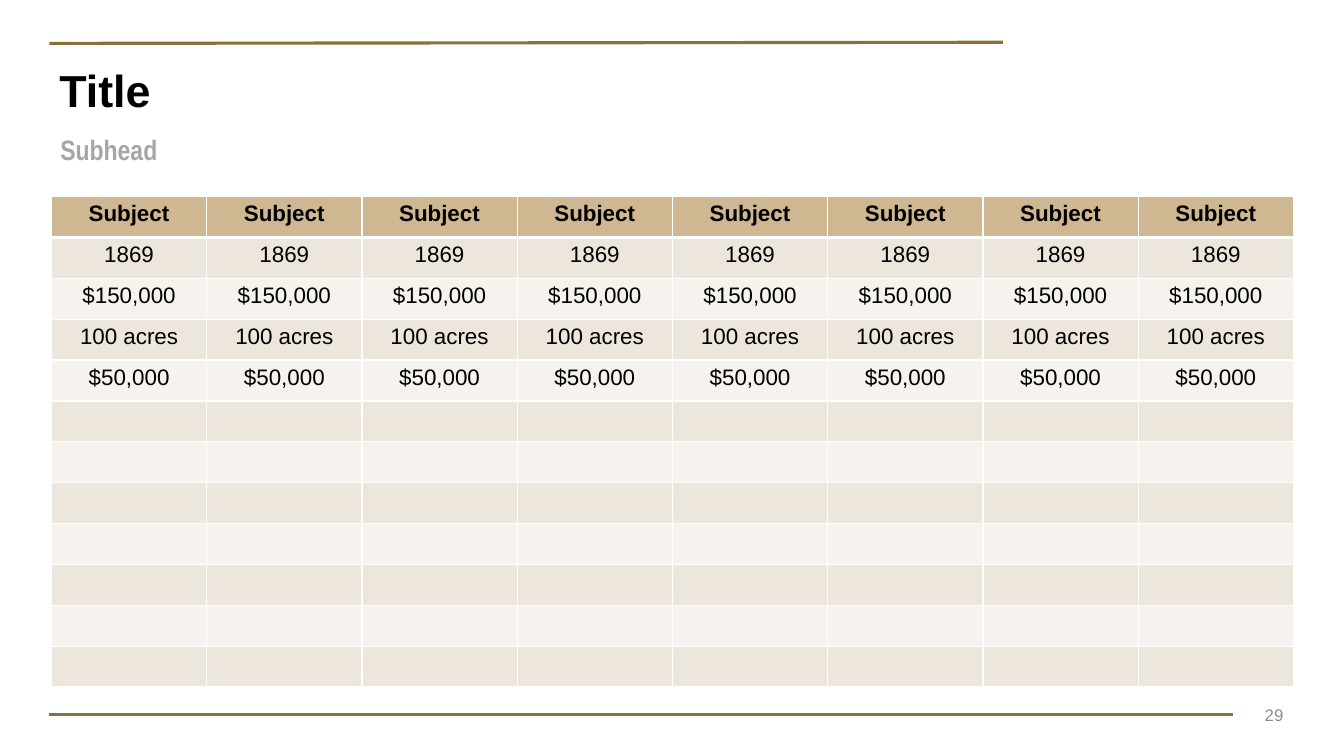
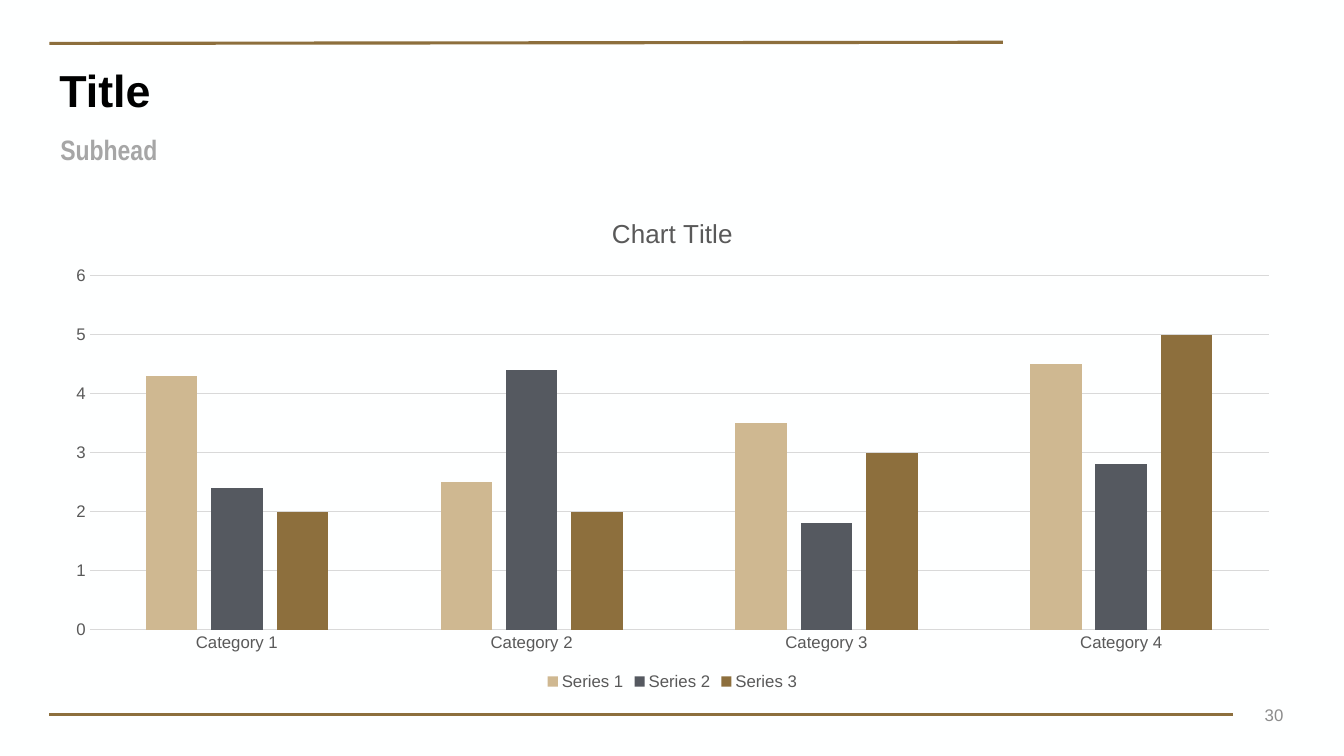
from lxml.etree import SubElement
from pptx import Presentation
from pptx.chart.data import CategoryChartData
from pptx.dml.color import RGBColor
from pptx.enum.chart import XL_CHART_TYPE, XL_LEGEND_POSITION, XL_TICK_MARK
from pptx.enum.shapes import MSO_CONNECTOR
from pptx.enum.text import MSO_ANCHOR, PP_ALIGN
from pptx.oxml.ns import qn
from pptx.util import Pt

PAPER = RGBColor(0xFE, 0xFF, 0xFF)
BLACK = RGBColor(0x00, 0x00, 0x00)
BRONZE = RGBColor(0x8D, 0x6F, 0x3D)
GOLD = RGBColor(0xCF, 0xB8, 0x91)
SLATE = RGBColor(0x55, 0x59, 0x60)
SAND = RGBColor(0xED, 0xE6, 0xDC)
CREAM = RGBColor(0xF6, 0xF3, 0xEE)
SUBHEAD_GRAY = RGBColor(0xA6, 0xA6, 0xA6)
NUMBER_GRAY = RGBColor(0x8C, 0x8C, 0x8C)
CHART_GRAY = RGBColor(0x59, 0x59, 0x59)
GRID_GRAY = RGBColor(0xD9, 0xD9, 0xD9)

BODY_FONT = "Arial"
SUBHEAD_FONT = "Arial Narrow"
CONTENT_LEFT, CONTENT_TOP, CONTENT_WIDTH = 36.75, 140.4, 887.2


def style_font(font, size, color, name=BODY_FONT, bold=False):
    font.size = Pt(size)
    font.name = name
    font.bold = bold
    font.color.rgb = color


def write_text(frame, text, size, color=BLACK, name=BODY_FONT, bold=False,
               align=PP_ALIGN.LEFT, spacing=1.0):
    para = frame.paragraphs[0]
    para.alignment = align
    para.line_spacing = spacing
    span = para.add_run()
    span.text = text
    style_font(span.font, size, color, name, bold)


class Deck:
    def __init__(self):
        self.deck = Presentation()
        self.deck.slide_width = Pt(960)
        self.deck.slide_height = Pt(540)
        self.page = None

    def start_page(self, title, subhead, number):
        self.page = self.deck.slides.add_slide(self.deck.slide_layouts[6])
        fill = self.page.background.fill
        fill.solid()
        fill.fore_color.rgb = PAPER
        self.rule(716.4, 30.2, 35.3, 31)
        self.rule(880.6, 510.4, 35.3, 510.4)
        self.text(35.3, 43.9, 614.2, 45.4, title, anchor=MSO_ANCHOR.MIDDLE,
                  size=32, bold=True, spacing=0.9)
        self.text(36, 93.6, 887.8, 28.8, subhead, size=20, bold=True,
                  color=SUBHEAD_GRAY, name=SUBHEAD_FONT, spacing=0.9)
        self.text(837.4, 496.1, 86.4, 28.8, str(number),
                  anchor=MSO_ANCHOR.MIDDLE, size=12, color=NUMBER_GRAY,
                  align=PP_ALIGN.RIGHT)

    def rule(self, x1, y1, x2, y2):
        line = self.page.shapes.add_connector(
            MSO_CONNECTOR.STRAIGHT, Pt(x1), Pt(y1), Pt(x2), Pt(y2))
        line.line.color.rgb = BRONZE
        line.line.width = Pt(2.25)
        SubElement(line.element.spPr, qn("a:effectLst"))

    def text(self, left, top, width, height, text,
             anchor=MSO_ANCHOR.TOP, **style):
        box = self.page.shapes.add_textbox(
            Pt(left), Pt(top), Pt(width), Pt(height))
        box.text_frame.word_wrap = True
        box.text_frame.vertical_anchor = anchor
        write_text(box.text_frame, text, **style)

    def cell_border(self, cell, side, width):
        properties = cell._tc.get_or_add_tcPr()
        line = SubElement(properties, qn(f"a:ln{side}"), w=str(Pt(width)))
        solid = SubElement(line, qn("a:solidFill"))
        SubElement(solid, qn("a:srgbClr"), val=str(PAPER))

    def table(self, row_texts, row_count, column_count, row_height):
        table = self.page.shapes.add_table(
            row_count, column_count, Pt(CONTENT_LEFT), Pt(CONTENT_TOP),
            Pt(CONTENT_WIDTH), Pt(row_height * row_count)).table
        table.horz_banding = False
        for index, row in enumerate(table.rows):
            header = index == 0
            row_fill = GOLD if header else SAND if index % 2 else CREAM
            widths = {"L": 1, "R": 1, "T": 3 if index == 1 else 1,
                      "B": 3 if header else 1}
            for cell in row.cells:
                cell.margin_bottom = Pt(2)
                for side, width in widths.items():
                    self.cell_border(cell, side, width)
                cell.fill.solid()
                cell.fill.fore_color.rgb = row_fill
                if index < len(row_texts):
                    write_text(cell.text_frame, row_texts[index], 16,
                               bold=header, align=PP_ALIGN.CENTER)

    def column_chart(self, title, categories, series):
        data = CategoryChartData()
        data.categories = categories
        for name, values, _ in series:
            data.add_series(name, values)
        chart = self.page.shapes.add_chart(
            XL_CHART_TYPE.COLUMN_CLUSTERED, Pt(CONTENT_LEFT), Pt(CONTENT_TOP),
            Pt(CONTENT_WIDTH), Pt(355.7), data).chart
        style_font(chart.font, 12, CHART_GRAY)
        write_text(chart.chart_title.text_frame, title, 18.6, CHART_GRAY,
                   align=PP_ALIGN.CENTER)
        chart.chart_title.include_in_layout = False
        chart.has_legend = True
        chart.legend.position = XL_LEGEND_POSITION.BOTTOM
        chart.legend.include_in_layout = False
        style_font(chart.legend.font, 12, CHART_GRAY)

        plot = chart.plots[0]
        plot.gap_width = 219
        plot.overlap = -27
        plot.vary_by_categories = False
        for bars, (_, _, color) in zip(plot.series, series):
            bars.format.fill.solid()
            bars.format.fill.fore_color.rgb = color

        for axis in (chart.category_axis, chart.value_axis):
            axis.major_tick_mark = XL_TICK_MARK.NONE
            axis.minor_tick_mark = XL_TICK_MARK.NONE
            style_font(axis.tick_labels.font, 12, CHART_GRAY)
        values_axis = chart.value_axis
        values_axis.minimum_scale = 0
        values_axis.maximum_scale = 6
        values_axis.major_unit = 1
        values_axis.format.line.fill.background()
        for line in (chart.category_axis.format.line,
                     values_axis.major_gridlines.format.line):
            line.color.rgb = GRID_GRAY
            line.width = Pt(0.75)

    def save(self):
        self.deck.save("out.pptx")


def main():
    deck = Deck()
    deck.start_page("Title", "Subhead", 29)
    deck.table(["Subject", "1869", "$150,000", "100 acres", "$50,000"],
               row_count=12, column_count=8, row_height=29.22)

    deck.start_page("Title", "Subhead", 30)
    deck.column_chart(
        "Chart Title",
        [f"Category {number}" for number in range(1, 5)],
        [("Series 1", (4.3, 2.5, 3.5, 4.5), GOLD),
         ("Series 2", (2.4, 4.4, 1.8, 2.8), SLATE),
         ("Series 3", (2, 2, 3, 5), BRONZE)])
    deck.save()


if __name__ == "__main__":
    main()
